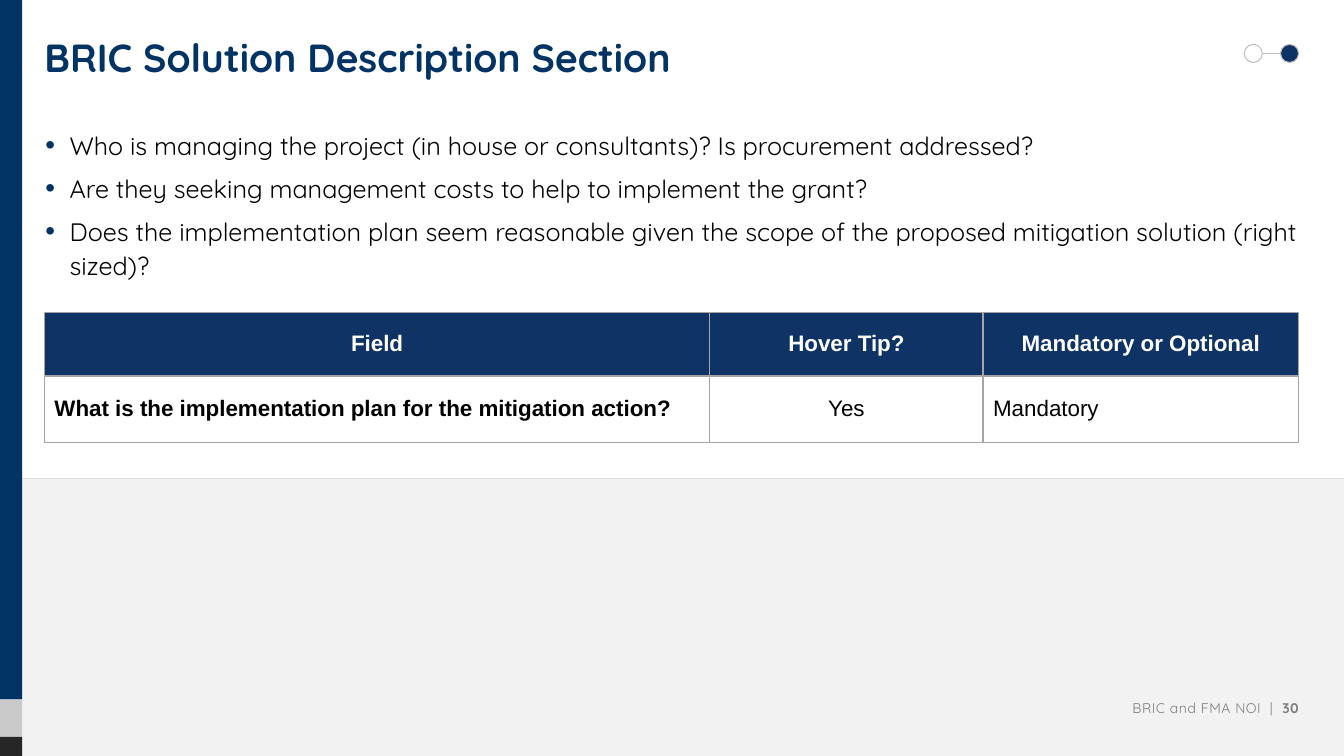
from lxml import etree
from pptx import Presentation
from pptx.dml.color import RGBColor
from pptx.enum.shapes import MSO_CONNECTOR, MSO_SHAPE
from pptx.enum.text import MSO_ANCHOR, MSO_AUTO_SIZE, PP_ALIGN
from pptx.oxml.ns import qn
from pptx.util import Inches, Pt

# Content
TITLE = "BRIC Solution Description Section"
QUESTIONS = [
    "Who is managing the project (in house or consultants)? Is procurement addressed?",
    "Are they seeking management costs to help to implement the grant?",
    "Does the implementation plan seem reasonable given the scope of the proposed "
    "mitigation solution (right sized)?",
]
FIELDS = [
    ["Field", "Hover Tip?", "Mandatory or Optional"],
    ["What is the implementation plan for the mitigation action?", "Yes", "Mandatory"],
]
FOOTER = [("BRIC and FMA NOI  |  ", False), ("30", True)]

# Style
NAVY = RGBColor(0x01, 0x33, 0x65)
HEADER_BLUE = RGBColor(0x0F, 0x33, 0x64)
WHITE = RGBColor(0xFF, 0xFF, 0xFF)
BLACK = RGBColor(0x00, 0x00, 0x00)
PANEL = RGBColor(0xF2, 0xF2, 0xF2)
PANEL_EDGE = RGBColor(0xDF, 0xDF, 0xDF)
SILVER = RGBColor(0xCA, 0xCA, 0xCA)
CHARCOAL = RGBColor(0x26, 0x26, 0x26)
GRID = RGBColor(0xA4, 0xA5, 0xA4)
DOT_EDGE = RGBColor(0xBF, 0xBF, 0xBF)
FOOTER_GREY = RGBColor(0x7F, 0x7F, 0x7F)
FONT, TABLE_FONT = "Quicksand", "Arial"

# Layout, in inches
WIDTH, HEIGHT = 13.33, 7.5
LEFT, CONTENT_WIDTH = 0.44, 12.43
PANEL_TOP = 4.75
STRIP_WIDTH = 0.22
STRIP = [(0, NAVY), (6.94, SILVER), (7.31, CHARCOAL)]
COLUMNS, ROWS = [6.6, 2.71, 3.13], [0.63, 0.66]
DOT, DOT_TOP = 0.18, 0.44
DOTS = [(12.34, WHITE), (12.7, HEADER_BLUE)]


def add_filled(page, kind, left, top, width, height, color, edge=None):
    shape = page.shapes.add_shape(kind, Inches(left), Inches(top), Inches(width), Inches(height))
    shape.shadow.inherit = False
    shape.fill.solid()
    shape.fill.fore_color.rgb = color
    if edge is None:
        shape.line.fill.background()
    else:
        shape.line.color.rgb = edge
        shape.line.width = Pt(0.75)


def add_line(page, left, right, y, color, weight):
    line = page.shapes.add_connector(
        MSO_CONNECTOR.STRAIGHT, Inches(left), Inches(y), Inches(right), Inches(y))
    line.line.color.rgb = color
    line.line.width = Pt(weight)
    etree.SubElement(line._element.spPr, qn("a:effectLst"))


def set_font(font, name, size, color, bold=False):
    font.name, font.size, font.bold = name, Pt(size), bold
    font.color.rgb = color


def set_frame(box, anchor=MSO_ANCHOR.TOP):
    frame = box.text_frame
    frame.word_wrap = True
    frame.auto_size = MSO_AUTO_SIZE.NONE
    frame.vertical_anchor = anchor
    frame.margin_left = frame.margin_right = 0
    frame.margin_top = frame.margin_bottom = Inches(0.05)
    return frame


def add_bullet(para):
    props = para._p.get_or_add_pPr()
    props.set("marL", str(Inches(0.25)))
    props.set("indent", str(Inches(-0.24)))
    color = etree.SubElement(props, qn("a:buClr"))
    etree.SubElement(color, qn("a:srgbClr"), val=str(NAVY))
    etree.SubElement(props, qn("a:buSzPct"), val="110000")
    etree.SubElement(props, qn("a:buFont"), typeface="Arial")
    etree.SubElement(props, qn("a:buChar"), char="•")


def add_borders(cell):
    props = cell._tc.get_or_add_tcPr()
    for index, side in enumerate(("lnL", "lnR", "lnT", "lnB")):
        edge = etree.Element(qn(f"a:{side}"), w=str(Pt(1)))
        fill = etree.SubElement(edge, qn("a:solidFill"))
        etree.SubElement(fill, qn("a:srgbClr"), val=str(GRID))
        props.insert(index, edge)


deck = Presentation()
deck.slide_width, deck.slide_height = Inches(WIDTH), Inches(HEIGHT)
page = deck.slides.add_slide(deck.slide_layouts[5])

# Lower panel and left strip
add_filled(page, MSO_SHAPE.RECTANGLE, 0, PANEL_TOP, WIDTH, HEIGHT - PANEL_TOP, PANEL)
add_line(page, 0, WIDTH, PANEL_TOP, PANEL_EDGE, 1)
strip_ends = [top for top, _ in STRIP[1:]] + [HEIGHT]
for (top, color), end in zip(STRIP, strip_ends):
    add_filled(page, MSO_SHAPE.RECTANGLE, 0, top, STRIP_WIDTH, end - top, color)

# Title
title = page.shapes.title
title.left, title.top = Inches(LEFT), Inches(0.28)
title.width, title.height = Inches(CONTENT_WIDTH), Inches(0.84)
para = set_frame(title).paragraphs[0]
para.text = TITLE
para.alignment = PP_ALIGN.LEFT
set_font(para.font, FONT, 28, NAVY, True)

# Bulleted questions
box = page.shapes.add_textbox(Inches(LEFT), Inches(1.2), Inches(CONTENT_WIDTH), Inches(1.8))
frame = set_frame(box)
for index, question in enumerate(QUESTIONS):
    para = frame.add_paragraph() if index else frame.paragraphs[0]
    para.text = question
    para.line_spacing = 1.14
    para.space_before = Pt(3 if index else 0)
    para.space_after = Pt(3)
    add_bullet(para)
    set_font(para.font, FONT, 18, BLACK)

# Field table
table = page.shapes.add_table(
    len(ROWS), len(COLUMNS), Inches(LEFT), Inches(3.1),
    Inches(sum(COLUMNS)), Inches(sum(ROWS))).table
for column, width in zip(table.columns, COLUMNS):
    column.width = Inches(width)
for row_index, (row, height) in enumerate(zip(FIELDS, ROWS)):
    table.rows[row_index].height = Inches(height)
    header = row_index == 0
    for column_index, text in enumerate(row):
        cell = table.cell(row_index, column_index)
        cell.vertical_anchor = MSO_ANCHOR.MIDDLE
        cell.fill.solid()
        cell.fill.fore_color.rgb = HEADER_BLUE if header else WHITE
        add_borders(cell)
        para = cell.text_frame.paragraphs[0]
        para.text = text
        para.alignment = PP_ALIGN.CENTER if header or column_index == 1 else PP_ALIGN.LEFT
        set_font(para.font, TABLE_FONT, 16, WHITE if header else BLACK,
                 header or column_index == 0)

# Footer with page number
box = page.shapes.add_textbox(Inches(4.79), Inches(6.88), Inches(8.09), Inches(0.29))
para = set_frame(box, MSO_ANCHOR.MIDDLE).paragraphs[0]
para.alignment = PP_ALIGN.RIGHT
for text, bold in FOOTER:
    span = para.add_run()
    span.text = text
    set_font(span.font, FONT, 10, FOOTER_GREY, bold)
    span._r.get_or_add_rPr().set("spc", "40")

# Progress dots
add_line(page, DOTS[0][0] + DOT, DOTS[1][0], DOT_TOP + DOT / 2, DOT_EDGE, 0.75)
for left, color in DOTS:
    add_filled(page, MSO_SHAPE.OVAL, left, DOT_TOP, DOT, DOT, color, DOT_EDGE)

deck.save("out.pptx")
